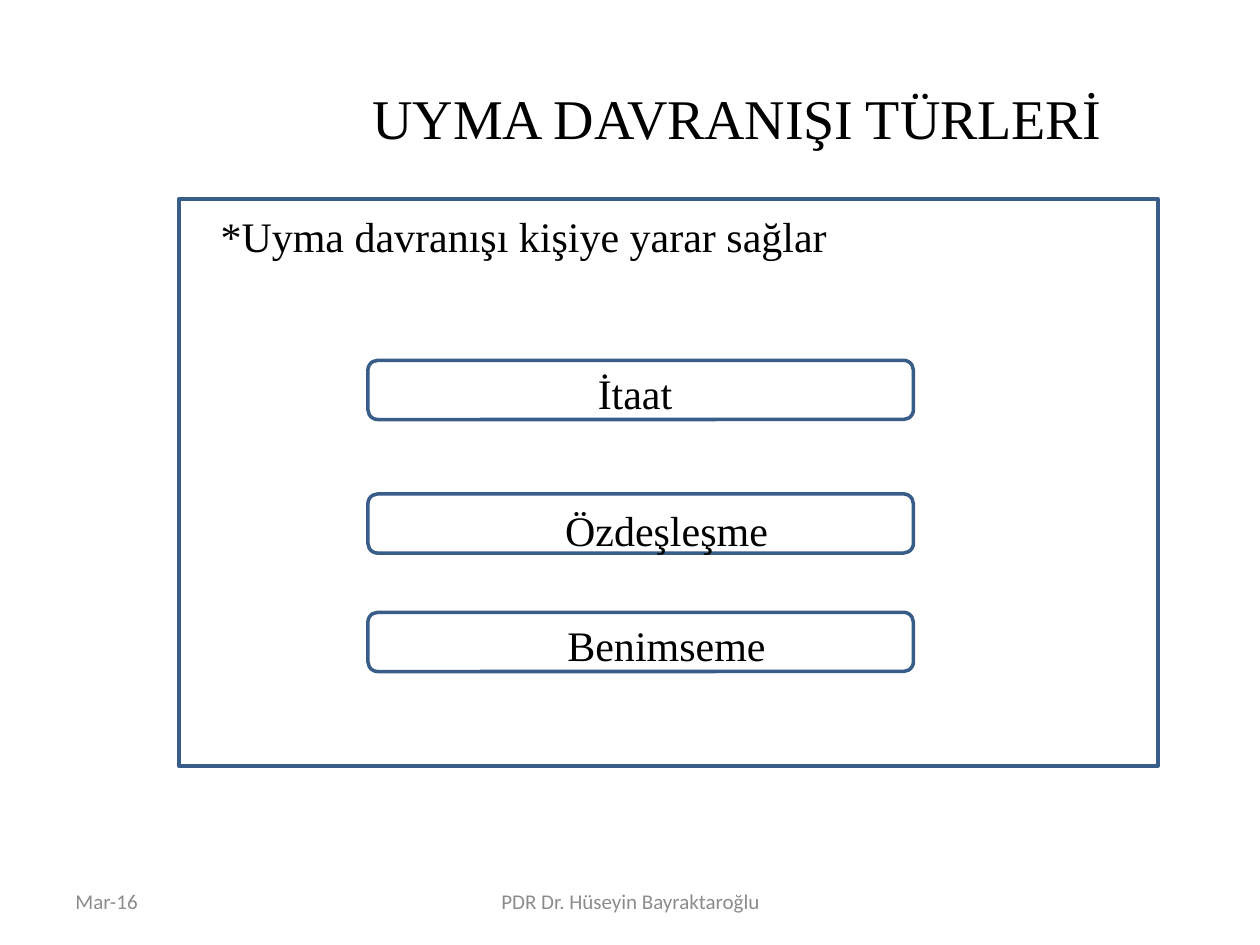
from dataclasses import dataclass

from pptx import Presentation
from pptx.dml.color import RGBColor
from pptx.enum import shapes, text
from pptx.util import Inches, Pt


@dataclass(frozen=True)
class Theme:
    ink: RGBColor = RGBColor(0x00, 0x00, 0x00)
    muted: RGBColor = RGBColor(0x8C, 0x8C, 0x8C)
    outline: RGBColor = RGBColor(0x38, 0x5D, 0x89)
    outline_width: Pt = Pt(2)
    body_font: str = "Times New Roman"
    footer_font: str = "Calibri"
    title_size: Pt = Pt(32)
    body_size: Pt = Pt(24)
    footer_size: Pt = Pt(12)


THEME = Theme()
BODY = {"name": THEME.body_font, "size": THEME.body_size}
TITLE = {"name": THEME.body_font, "size": THEME.title_size}
FOOTER = {"name": THEME.footer_font, "size": THEME.footer_size}
LEFT, CENTER = text.PP_ALIGN.LEFT, text.PP_ALIGN.CENTER
TOP, MIDDLE = text.MSO_ANCHOR.TOP, text.MSO_ANCHOR.MIDDLE
NO_INSETS = dict.fromkeys(
    ("margin_left", "margin_top", "margin_right", "margin_bottom"), 0)


def set_attributes(target, values):
    for name, value in values.items():
        setattr(target, name, value)


def add_text(slide, box, wording, font, color=THEME.ink, alignment=LEFT,
             line_spacing=None, **frame_format):
    """Place one wrapped paragraph in box (left, top, width, height in inches)."""
    shape = slide.shapes.add_textbox(*map(Inches, box))
    frame = shape.text_frame
    set_attributes(frame, {"word_wrap": True, **frame_format})
    paragraph = frame.paragraphs[0]
    set_attributes(paragraph, {"alignment": alignment,
                               "line_spacing": line_spacing})
    run = paragraph.add_run()
    run.text = wording
    set_attributes(run.font, font)
    run.font.color.rgb = color
    return run


def add_outline(slide, kind, box):
    shape = slide.shapes.add_shape(kind, *map(Inches, box))
    shape.shadow.inherit = False
    shape.fill.background()
    shape.line.color.rgb = THEME.outline
    shape.line.width = THEME.outline_width


def add_title(slide, box, indent):
    insets = {**NO_INSETS, "margin_left": Inches(indent)}
    run = add_text(slide, box, "UYMA DAVRANIŞI TÜRLERİ", TITLE,
                   alignment=CENTER, vertical_anchor=MIDDLE, **insets)
    run._r.get_or_add_rPr().set("spc", "-10")


def add_type_box(slide, box, wording, label_left, label_top):
    """Draw a rounded box; its wide label is offset from the box."""
    add_outline(slide, shapes.MSO_SHAPE.ROUNDED_RECTANGLE, box)
    add_text(slide, (label_left, label_top, 8.08, 0.56), wording, BODY,
             alignment=CENTER, line_spacing=1.57, vertical_anchor=TOP,
             **NO_INSETS)


def add_content(slide, box):
    left, top, width, _ = box
    add_outline(slide, shapes.MSO_SHAPE.RECTANGLE, box)
    add_text(slide, (left + 0.33, top + 0.09, width - 0.52, 0.4),
             "*Uyma davranışı kişiye yarar sağlar", BODY, **NO_INSETS)
    conformity_types = (
        ("İtaat", 1.28, -0.42, 1.11),
        ("Özdeşleşme", 2.34, -0.17, 2.2),
        ("Benimseme", 3.28, -0.17, 3.11),
    )
    for wording, box_top, label_left, label_top in conformity_types:
        add_type_box(slide, (left + 1.5, top + box_top, 4.33, 0.47), wording,
                     left + label_left, top + label_top)


def add_footer(slide, box):
    left, top, _, height = box
    parts = (
        ("Mar-16", 0, 2.33, LEFT),
        ("PDR Dr. Hüseyin Bayraktaroğlu", 2.92, 3.17, CENTER),
    )
    for wording, offset, width, alignment in parts:
        add_text(slide, (left + offset, top, width, height), wording, FOOTER,
                 THEME.muted, alignment, vertical_anchor=MIDDLE)


def main():
    presentation = Presentation()
    set_attributes(presentation, {"slide_width": Inches(10),
                                  "slide_height": Inches(7.5)})
    slide = presentation.slides.add_slide(presentation.slide_layouts[6])
    add_title(slide, (0.42, 0.66, 9.33, 0.54), indent=1.53)
    add_content(slide, (1.42, 1.58, 7.77, 4.5))
    add_footer(slide, (0.5, 6.95, 9, 0.4))
    presentation.save("out.pptx")


if __name__ == "__main__":
    main()
